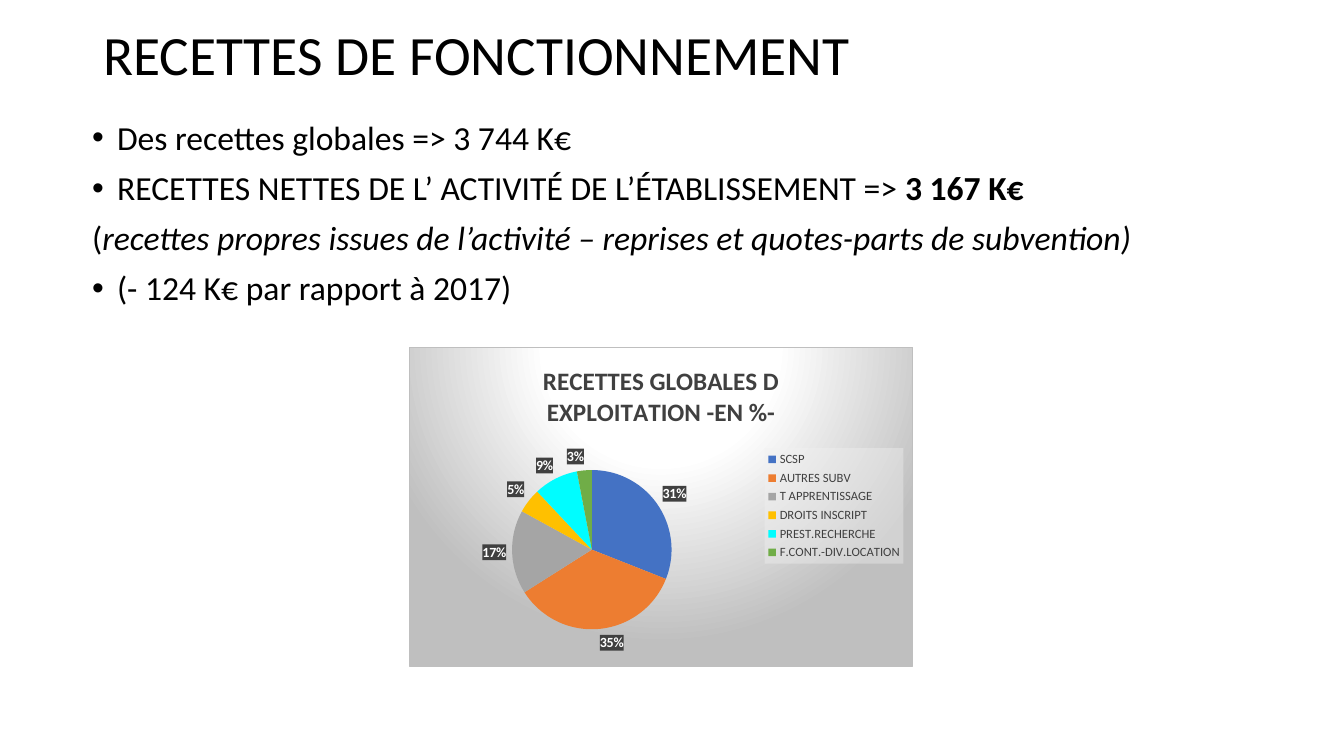
from lxml import etree
from pptx import Presentation
from pptx.chart.data import CategoryChartData
from pptx.dml.color import RGBColor
from pptx.enum.chart import XL_CHART_TYPE, XL_LABEL_POSITION, XL_LEGEND_POSITION
from pptx.enum.text import MSO_ANCHOR, MSO_AUTO_SIZE, PP_ALIGN
from pptx.oxml import parse_xml
from pptx.oxml.ns import nsdecls, qn
from pptx.util import Emu, Pt

PIE = XL_CHART_TYPE.PIE
OUTSIDE = XL_LABEL_POSITION.OUTSIDE_END
RIGHT = XL_LEGEND_POSITION.RIGHT
MIDDLE = MSO_ANCHOR.MIDDLE
TOP = MSO_ANCHOR.TOP
NO_FIT = MSO_AUTO_SIZE.NONE
LEFT = PP_ALIGN.LEFT

PX_PER_INCH = 100.8
FONT = "Calibri"
CHART_BOX = (409, 347, 504, 320)
PLOT_BOX = (512, 470, 160, 160)
LEGEND_BOX = (765, 448, 139, 116)

PLAIN, BOLD, ITALIC = "plain", "bold", "italic"
LINES = [
    (True, [("Des recettes globales => 3 744 K€", PLAIN)]),
    (True, [("RECETTES NETTES DE L’ ACTIVITÉ DE L’ÉTABLISSEMENT => ", PLAIN),
            ("3 167 K€", BOLD)]),
    (False, [("(", PLAIN),
             ("recettes propres issues de l’activité – reprises et quotes-parts de subvention)", ITALIC)]),
    (True, [("(- 124 K€ par rapport à 2017)", PLAIN)]),
]
RECEIPTS = [
    ("SCSP", 31, "4472C4"),
    ("AUTRES SUBV", 35, "ED7D31"),
    ("T APPRENTISSAGE", 17, "A5A5A5"),
    ("DROITS INSCRIPT", 5, "FFC000"),
    ("PREST.RECHERCHE", 9, "00FDFF"),
    ("F.CONT.-DIV.LOCATION", 3, "70AD47"),
]


def px(length):
    return Emu(round(length * 914400 / PX_PER_INCH))


def color(value):
    return RGBColor.from_string(value)


def style_font(font, size, value, bold=False, italic=False):
    font.name = FONT
    font.size = Pt(size)
    font.bold = bold
    font.italic = italic
    font.color.rgb = color(value)


def place(box, left, top, width, height, anchor):
    box.left, box.top, box.width, box.height = map(px, (left, top, width, height))
    frame = box.text_frame
    frame.word_wrap = True
    frame.auto_size = NO_FIT
    frame.vertical_anchor = anchor
    return frame


def add_title(page, text):
    frame = place(page.shapes.title, 93, 7, 1159, 101, MIDDLE)
    frame.text = text
    para = frame.paragraphs[0]
    para.alignment = LEFT
    para.line_spacing = 0.9
    style_font(para.runs[0].font, 39.6, "000000")


def set_bullet(para, bulleted):
    indent = px(25) if bulleted else 0
    properties = para._p.get_or_add_pPr()
    properties.set("marL", str(indent))
    properties.set("indent", str(-indent))
    if bulleted:
        etree.SubElement(properties, qn("a:buFont")).set("typeface", "Arial")
        etree.SubElement(properties, qn("a:buChar")).set("char", "•")
    else:
        etree.SubElement(properties, qn("a:buNone"))


def add_list(page, lines):
    frame = place(page.placeholders[1], 82, 116, 1078, 564, TOP)
    for index, (bulleted, pieces) in enumerate(lines):
        para = frame.add_paragraph() if index else frame.paragraphs[0]
        para.line_spacing = 0.9
        para.space_before = Pt(10)
        set_bullet(para, bulleted)
        for text, look in pieces:
            span = para.add_run()
            span.text = text
            style_font(span.font, 24, "000000", look == BOLD, look == ITALIC)


def fill_xml(value, opacity):
    return parse_xml(
        f'<c:spPr {nsdecls("c", "a")}><a:solidFill><a:srgbClr val="{value}">'
        f'<a:alpha val="{opacity * 1000}"/></a:srgbClr></a:solidFill></c:spPr>')


def background_xml():
    stops = "".join(
        f'<a:gs pos="{place_percent * 1000}"><a:srgbClr val="{value}"/></a:gs>'
        for place_percent, value in ((0, "FFFFFF"), (39, "FFFFFF"), (100, "BFBFBF")))
    return parse_xml(
        f'<c:spPr {nsdecls("c", "a")}><a:gradFill><a:gsLst>{stops}</a:gsLst>'
        '<a:path path="circle"><a:fillToRect l="50000" t="-80000" r="50000" b="180000"/></a:path>'
        '</a:gradFill><a:ln w="9525"><a:solidFill><a:srgbClr val="BFBFBF"/></a:solidFill></a:ln></c:spPr>')


def layout_xml(box, target=""):
    left, top, width, height = CHART_BOX
    shares = {
        "x": (box[0] - left) / width,
        "y": (box[1] - top) / height,
        "w": box[2] / width,
        "h": box[3] / height,
    }
    modes = '<c:xMode val="edge"/><c:yMode val="edge"/>'
    values = "".join(f'<c:{name} val="{share:.3f}"/>' for name, share in shares.items())
    return parse_xml(
        f'<c:layout {nsdecls("c")}><c:manualLayout>{target}{modes}{values}'
        '</c:manualLayout></c:layout>')


def drop_layout(element):
    for layout in element.findall(qn("c:layout")):
        element.remove(layout)


def format_legend(chart):
    chart.has_legend = True
    legend = chart.legend
    legend.position = RIGHT
    legend.include_in_layout = False
    style_font(legend.font, 9, "404040")
    element = legend._element
    drop_layout(element)
    overlay = element.find(qn("c:overlay"))
    overlay.addprevious(layout_xml(LEGEND_BOX))
    overlay.addnext(fill_xml("F2F2F2", 39))


def format_labels(plot):
    plot.has_data_labels = True
    labels = plot.data_labels
    labels.show_percentage = True
    labels.show_value = False
    labels.number_format = "0%"
    labels.number_format_is_linked = False
    labels.position = OUTSIDE
    style_font(labels.font, 10, "FFFFFF", bold=True)
    labels._element.find(qn("c:txPr")).addprevious(fill_xml("404040", 95))


def add_pie(page, title, receipts):
    data = CategoryChartData()
    data.categories = [name for name, share, value in receipts]
    data.add_series("Series 1", [share for name, share, value in receipts])
    chart = page.shapes.add_chart(PIE, *map(px, CHART_BOX), data).chart
    style_font(chart.font, 10, "000000")
    chart.has_title = True
    chart.chart_title.text_frame.text = title
    style_font(chart.chart_title.text_frame.paragraphs[0].runs[0].font, 18, "404040", bold=True)
    plot = chart.plots[0]
    plot.vary_by_categories = True
    for index, (name, share, value) in enumerate(receipts):
        fill = plot.series[0].points[index].format.fill
        fill.solid()
        fill.fore_color.rgb = color(value)
    format_labels(plot)
    format_legend(chart)
    body = chart._chartSpace.find(qn("c:chart"))
    body.addnext(background_xml())
    area = body.find(qn("c:plotArea"))
    drop_layout(area)
    area.insert(0, layout_xml(PLOT_BOX, '<c:layoutTarget val="inner"/>'))


def main():
    deck = Presentation()
    deck.slide_width, deck.slide_height = px(1344), px(756)
    page = deck.slides.add_slide(deck.slide_layouts[1])
    add_title(page, "RECETTES DE FONCTIONNEMENT")
    add_list(page, LINES)
    add_pie(page, "RECETTES GLOBALES D EXPLOITATION -EN %-", RECEIPTS)
    deck.save("out.pptx")


if __name__ == "__main__":
    main()
